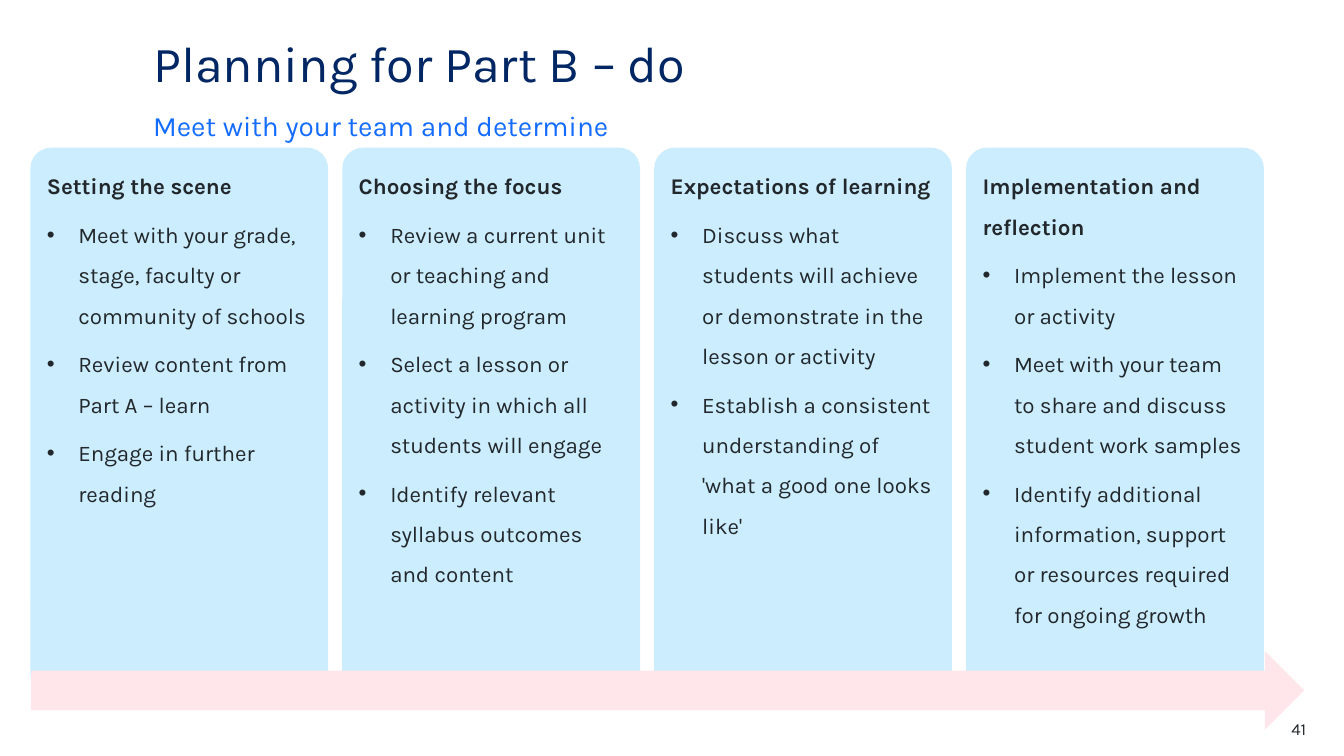
import pptx
import pptx.util
import pptx.dml.color
import pptx.enum.shapes
import pptx.enum.text
import pptx.oxml.ns
from lxml import etree

Pt = pptx.util.Pt
SHAPES = pptx.enum.shapes.MSO_SHAPE
ANCHOR = pptx.enum.text.MSO_ANCHOR
ALIGN = pptx.enum.text.PP_ALIGN

# Content
TITLE = "Planning for Part B – do"
SUBTITLE = "Meet with your team and determine"
PAGE_NUMBER = "41"
CARDS = [
    ("Setting the scene", [
        "Meet with your grade, stage, faculty or community of schools",
        "Review content from Part A – learn",
        "Engage in further reading",
    ]),
    ("Choosing the focus", [
        "Review a current unit or teaching and learning program",
        "Select a lesson or activity in which all students will engage",
        "Identify relevant syllabus outcomes and content",
    ]),
    ("Expectations of learning", [
        "Discuss what students will achieve or demonstrate in the lesson or activity",
        "Establish a consistent understanding of 'what a good one looks like'",
    ]),
    ("Implementation and reflection", [
        "Implement the lesson or activity",
        "Meet with your team to share and discuss student work samples",
        "Identify additional information, support or resources required for ongoing growth",
    ]),
]

# Style and layout, in points
FONT = "Karla"
COLORS = {"navy": "002664", "blue": "146CFD", "text": "22272B",
          "card": "CBEDFD", "arrow": "FFE6EA"}
SLIDE_WIDTH, SLIDE_HEIGHT = 960, 540
HEAD_LEFT, HEAD_WIDTH = 109.4, 793.4
CARD_LEFT, CARD_TOP, CARD_WIDTH, CARD_HEIGHT = 22.2, 106, 211.7, 390
CARD_STEP = 222.8
INDENT = 22.5


def color(name):
    return pptx.dml.color.RGBColor.from_string(COLORS[name])


def style(para, size, tint, bold=False, spacing=None, after=0, align=ALIGN.LEFT):
    para.alignment = align
    para.line_spacing = spacing
    para.space_before = Pt(0)
    para.space_after = Pt(after)
    para.font.name = FONT
    para.font.size = Pt(size)
    para.font.bold = bold
    para.font.color.rgb = color(tint)


def place(shape, left, top, width, height):
    shape.left, shape.top = Pt(left), Pt(top)
    shape.width, shape.height = Pt(width), Pt(height)


def set_line_of_text(shape, text, anchor, **look):
    frame = shape.text_frame
    frame.text = text
    frame.word_wrap = True
    frame.auto_size = pptx.enum.text.MSO_AUTO_SIZE.NONE
    frame.vertical_anchor = anchor
    frame.margin_left = frame.margin_right = Pt(0)
    frame.margin_top = frame.margin_bottom = Pt(0)
    style(frame.paragraphs[0], **look)


def add_filled(page, kind, box, tint):
    shape = page.shapes.add_shape(kind, *map(Pt, box))
    shape.shadow.inherit = False
    shape.fill.solid()
    shape.fill.fore_color.rgb = color(tint)
    shape.line.fill.background()
    return shape


def add_bullet(para):
    properties = para._p.get_or_add_pPr()
    properties.set("marL", str(Pt(INDENT)))
    properties.set("indent", str(-Pt(INDENT)))
    font = etree.SubElement(properties, pptx.oxml.ns.qn("a:buFont"))
    font.set("typeface", "Arial")
    mark = etree.SubElement(properties, pptx.oxml.ns.qn("a:buChar"))
    mark.set("char", "•")


def add_card(page, left, heading, points):
    card = add_filled(page, SHAPES.ROUNDED_RECTANGLE,
                      (left, CARD_TOP, CARD_WIDTH, CARD_HEIGHT), "card")
    card.adjustments[0] = 0.068
    card.line.color.rgb = color("card")
    card.line.width = Pt(1)
    frame = card.text_frame
    frame.word_wrap = True
    frame.vertical_anchor = ANCHOR.TOP
    frame.text = "\n".join([heading, *points])
    for index, para in enumerate(frame.paragraphs):
        if index:
            add_bullet(para)
        style(para, 16, "text", bold=index == 0, spacing=1.5, after=6)


def main():
    deck = pptx.Presentation()
    deck.slide_width, deck.slide_height = Pt(SLIDE_WIDTH), Pt(SLIDE_HEIGHT)
    page = deck.slides.add_slide(deck.slide_layouts[5])

    # Title and subtitle
    title = page.shapes.title
    place(title, HEAD_LEFT, 28, HEAD_WIDTH, 43.2)
    set_line_of_text(title, TITLE, ANCHOR.TOP, size=36, tint="navy", spacing=0.9)
    subtitle = page.shapes.add_textbox(0, 0, 0, 0)
    place(subtitle, HEAD_LEFT, 77, HEAD_WIDTH, 24.5)
    set_line_of_text(subtitle, SUBTITLE, ANCHOR.BOTTOM, size=20, tint="blue",
                     spacing=1.5, after=12)

    # Four step cards
    for index, (heading, points) in enumerate(CARDS):
        add_card(page, CARD_LEFT + index * CARD_STEP, heading, points)

    # Arrow across the foot of the cards
    add_filled(page, SHAPES.RIGHT_ARROW, (CARD_LEFT, 465, 909.4, 56.2), "arrow")

    # Page number
    number = page.shapes.add_textbox(0, 0, 0, 0)
    place(number, 876.2, 513.4, 56.9, 14.4)
    set_line_of_text(number, PAGE_NUMBER, ANCHOR.TOP, size=12, tint="text",
                     align=ALIGN.RIGHT)

    deck.save("out.pptx")


if __name__ == "__main__":
    main()
